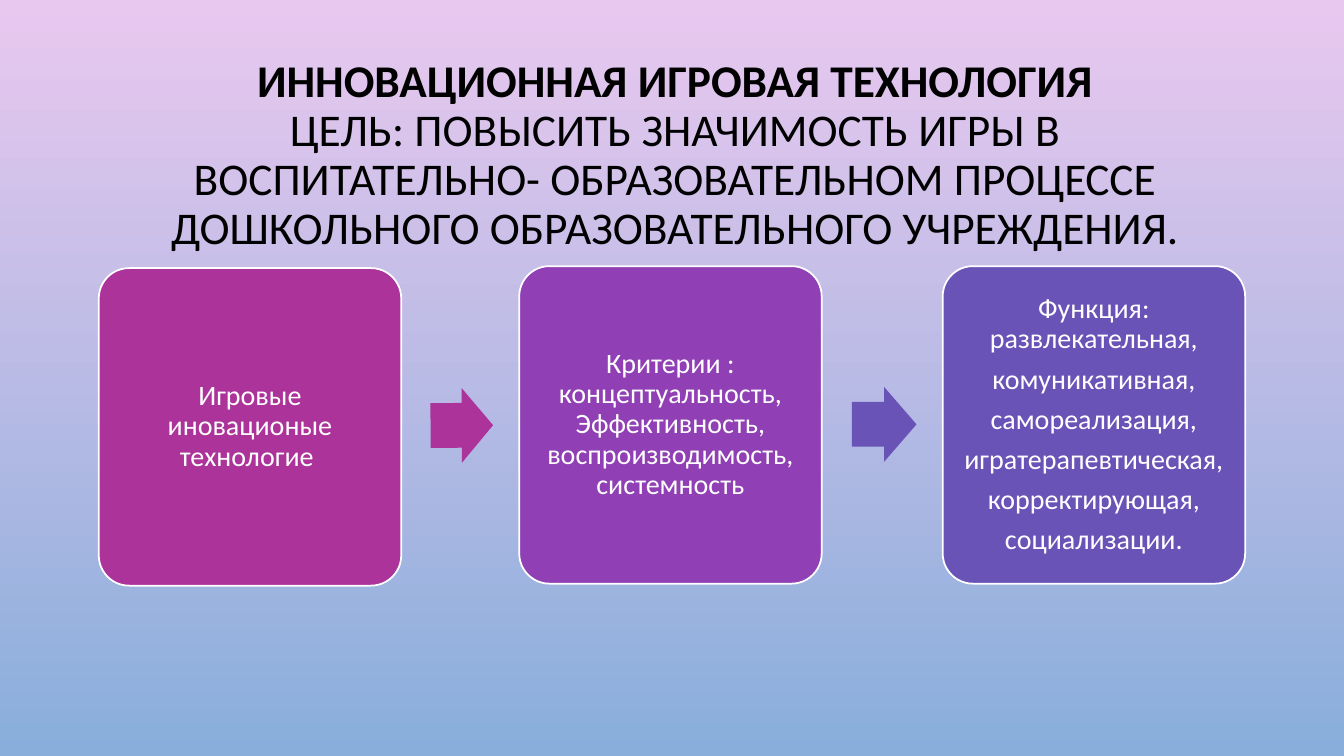
import pptx
import pptx.util
import pptx.dml.color
import pptx.enum.shapes
import pptx.enum.text

Inches = pptx.util.Inches
Pt = pptx.util.Pt
Shape = pptx.enum.shapes.MSO_SHAPE
CENTER = pptx.enum.text.PP_ALIGN.CENTER
MIDDLE = pptx.enum.text.MSO_ANCHOR.MIDDLE


def rgb(value):
    return pptx.dml.color.RGBColor.from_string(value)


def add_figure(kind, left, top, width, height, color):
    figure = slide.shapes.add_shape(
        kind, Inches(left), Inches(top), Inches(width), Inches(height))
    figure.shadow.inherit = False
    figure.fill.solid()
    figure.fill.fore_color.rgb = rgb(color)
    return figure


deck = pptx.Presentation()
deck.slide_width = Inches(13.33)
deck.slide_height = Inches(7.5)
slide = deck.slides.add_slide(deck.slide_layouts[5])

backdrop = slide.background.fill
backdrop.gradient()
backdrop.gradient_angle = 270
for stop, color in zip(backdrop.gradient_stops, ["E9C8EF", "89AEDB"]):
    stop.color.rgb = rgb(color)

title = slide.shapes.title
title.left, title.top = Inches(1.03), Inches(0.68)
title.width, title.height = Inches(11.33), Inches(1.75)
title.text_frame.word_wrap = True
title.text_frame.auto_size = pptx.enum.text.MSO_AUTO_SIZE.NONE
title.text_frame.vertical_anchor = MIDDLE
goal = title.text_frame.paragraphs[0]
goal.alignment = CENTER
goal.line_spacing = 0.9
heading = goal.add_run()
heading.text = "ИННОВАЦИОННАЯ ИГРОВАЯ ТЕХНОЛОГИЯ"
goal.add_line_break()
aim = goal.add_run()
aim.text = ("ЦЕЛЬ: ПОВЫСИТЬ ЗНАЧИМОСТЬ ИГРЫ В ВОСПИТАТЕЛЬНО- ОБРАЗОВАТЕЛЬНОМ "
            "ПРОЦЕССЕ ДОШКОЛЬНОГО ОБРАЗОВАТЕЛЬНОГО УЧРЕЖДЕНИЯ.")
goal.font.size = Pt(32.4)
for run, bold in [(heading, True), (aim, False)]:
    run.font.name = "Calibri"
    run.font.size = Pt(32.4)
    run.font.bold = bold
    run.font.color.rgb = rgb("000000")

stages = [
    (0.98, 2.66, "AC339A", ["Игровые иновационые технологие "]),
    (5.15, 2.64, "9040B4",
     ["Критерии : концептуальность, Эффективность, воспроизводимость, системность"]),
    (9.35, 2.64, "6953B7",
     ["Функция: развлекательная,", "комуникативная,", "самореализация,",
      "игратерапевтическая,", "корректирующая,", "социализации."]),
]
for left, top, color, lines in stages:
    stage = add_figure(Shape.ROUNDED_RECTANGLE, left, top, 3, 3.15, color)
    stage.adjustments[0] = 0.1
    stage.line.color.rgb = rgb("FFFFFF")
    stage.line.width = Pt(1.25)
    frame = stage.text_frame
    frame.word_wrap = True
    frame.vertical_anchor = MIDDLE
    frame.margin_left = frame.margin_right = Inches(0.08)
    frame.margin_top = frame.margin_bottom = Inches(0.08)
    frame.text = "\n".join(lines)
    for paragraph in frame.paragraphs:
        paragraph.alignment = CENTER
        paragraph.line_spacing = 0.9
        paragraph.space_after = Pt(7)
        paragraph.font.name = "Calibri"
        paragraph.font.size = Pt(20)
        paragraph.font.color.rgb = rgb("FFFFFF")

for left, top, width, color, turn in [(4.27, 3.85, 0.62, "AC339A", 359.7),
                                      (8.45, 3.84, 0.64, "6953B7", 0)]:
    arrow = add_figure(Shape.RIGHT_ARROW, left, top, width, 0.74, color)
    arrow.adjustments[0] = 0.6
    arrow.adjustments[1] = 0.5
    arrow.rotation = turn
    arrow.line.fill.background()

deck.save("out.pptx")
